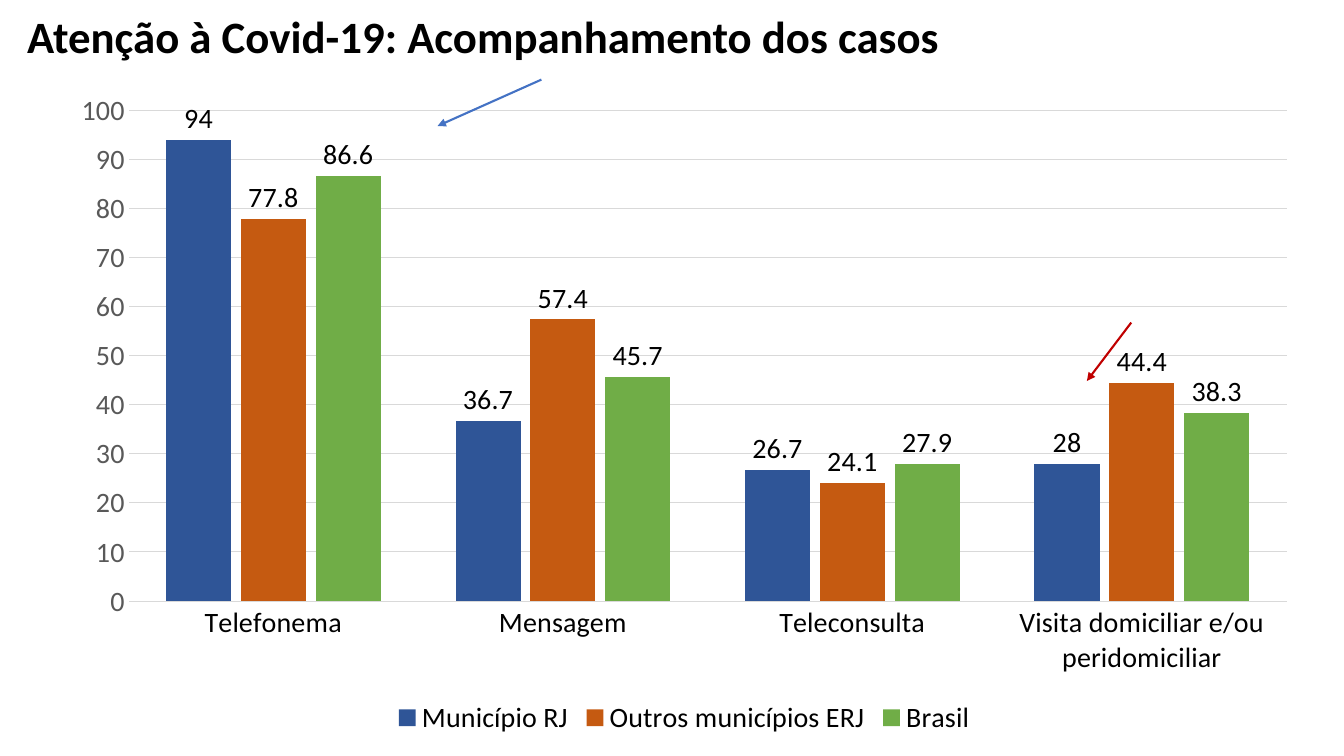
from lxml import etree
from pptx import Presentation
from pptx.chart.data import CategoryChartData
from pptx.dml.color import RGBColor
from pptx.enum.chart import XL_CHART_TYPE, XL_LABEL_POSITION, XL_LEGEND_POSITION, XL_TICK_MARK
from pptx.enum.shapes import MSO_CONNECTOR
from pptx.enum.text import MSO_ANCHOR, PP_ALIGN
from pptx.oxml.ns import qn
from pptx.util import Inches, Pt

COLUMNS = XL_CHART_TYPE.COLUMN_CLUSTERED
LABEL_ABOVE = XL_LABEL_POSITION.OUTSIDE_END
LEGEND_BOTTOM = XL_LEGEND_POSITION.BOTTOM
NO_TICK = XL_TICK_MARK.NONE
STRAIGHT = MSO_CONNECTOR.STRAIGHT
MIDDLE = MSO_ANCHOR.MIDDLE
LEFT = PP_ALIGN.LEFT

FONT = "Calibri"
COLORS = {
    "text": "000000", "scale": "595959", "grid": "D9D9D9",
    "rio": "2F5597", "others": "C55A11", "brazil": "70AD47",
    "red": "C00000", "blue": "4472C4",
}
TITLE = "Atenção à Covid-19: Acompanhamento dos casos"
CATEGORIES = ["Telefonema", "Mensagem", "Teleconsulta",
              "Visita domiciliar e/ou peridomiciliar"]
SERIES = [
    ("Município RJ", "rio", (94, 36.7, 26.7, 28)),
    ("Outros municípios ERJ", "others", (77.8, 57.4, 24.1, 44.4)),
    ("Brasil", "brazil", (86.6, 45.7, 27.9, 38.3)),
]
# start, end, color
ARROWS = [
    ((11.22, 3.2), (10.78, 3.78), "red"),
    ((5.37, 0.79), (4.34, 1.25), "blue"),
]


def rgb(name):
    return RGBColor.from_string(COLORS[name])


def style_font(font, size, color="text", bold=False):
    font.name = FONT
    font.size = Pt(size)
    font.bold = bold
    font.color.rgb = rgb(color)


def add_title(slide):
    sp = slide.shapes.title
    sp.left, sp.top = Inches(0.17), Inches(-0.34)
    sp.width, sp.height = Inches(12.84), Inches(1.45)
    tf = sp.text_frame
    tf.vertical_anchor = MIDDLE
    p = tf.paragraphs[0]
    p.alignment = LEFT
    p.line_spacing = 0.9
    r = p.add_run()
    r.text = TITLE
    style_font(r.font, 32, bold=True)


def add_case_chart(slide):
    data = CategoryChartData()
    data.categories = CATEGORIES
    for name, _, values in SERIES:
        data.add_series(name, values)
    chart = slide.shapes.add_chart(COLUMNS, Inches(0.56), Inches(0.79),
                                   Inches(12.45), Inches(6.56), data).chart
    style_font(chart.font, 20)
    chart.has_title = False
    chart.has_legend = True
    chart.legend.position = LEGEND_BOTTOM
    chart.legend.include_in_layout = False
    style_font(chart.legend.font, 20)

    for axis, color in ((chart.category_axis, "text"), (chart.value_axis, "scale")):
        axis.major_tick_mark = axis.minor_tick_mark = NO_TICK
        axis.format.line.fill.background()
        style_font(axis.tick_labels.font, 20, color)
    scale = chart.value_axis
    scale.minimum_scale, scale.maximum_scale, scale.major_unit = 0, 100, 10
    scale.has_major_gridlines = True
    grid = scale.major_gridlines.format.line
    grid.color.rgb = rgb("grid")
    grid.width = Pt(0.75)

    plot = chart.plots[0]
    plot.gap_width, plot.overlap = 115, -15
    plot.vary_by_categories = False
    for series, (_, color, _) in zip(plot.series, SERIES):
        series.format.fill.solid()
        series.format.fill.fore_color.rgb = rgb(color)
        series.invert_if_negative = False
        labels = series.data_labels
        labels.show_value = True
        labels.position = LABEL_ABOVE
        style_font(labels.font, 20)


def add_arrow(slide, start, end, color):
    points = [Inches(v) for v in start + end]
    arrow = slide.shapes.add_connector(STRAIGHT, *points)
    arrow.line.color.rgb = rgb(color)
    arrow.line.width = Pt(1.5)
    ln = arrow.line._get_or_add_ln()
    etree.SubElement(ln, qn("a:tailEnd"), type="triangle")
    etree.SubElement(ln.getparent(), qn("a:effectLst"))


def main():
    prs = Presentation()
    prs.slide_width, prs.slide_height = Inches(13.33), Inches(7.5)
    slide = prs.slides.add_slide(prs.slide_layouts[5])
    add_title(slide)
    add_case_chart(slide)
    for start, end, color in ARROWS:
        add_arrow(slide, start, end, color)
    prs.save("out.pptx")


if __name__ == "__main__":
    main()
